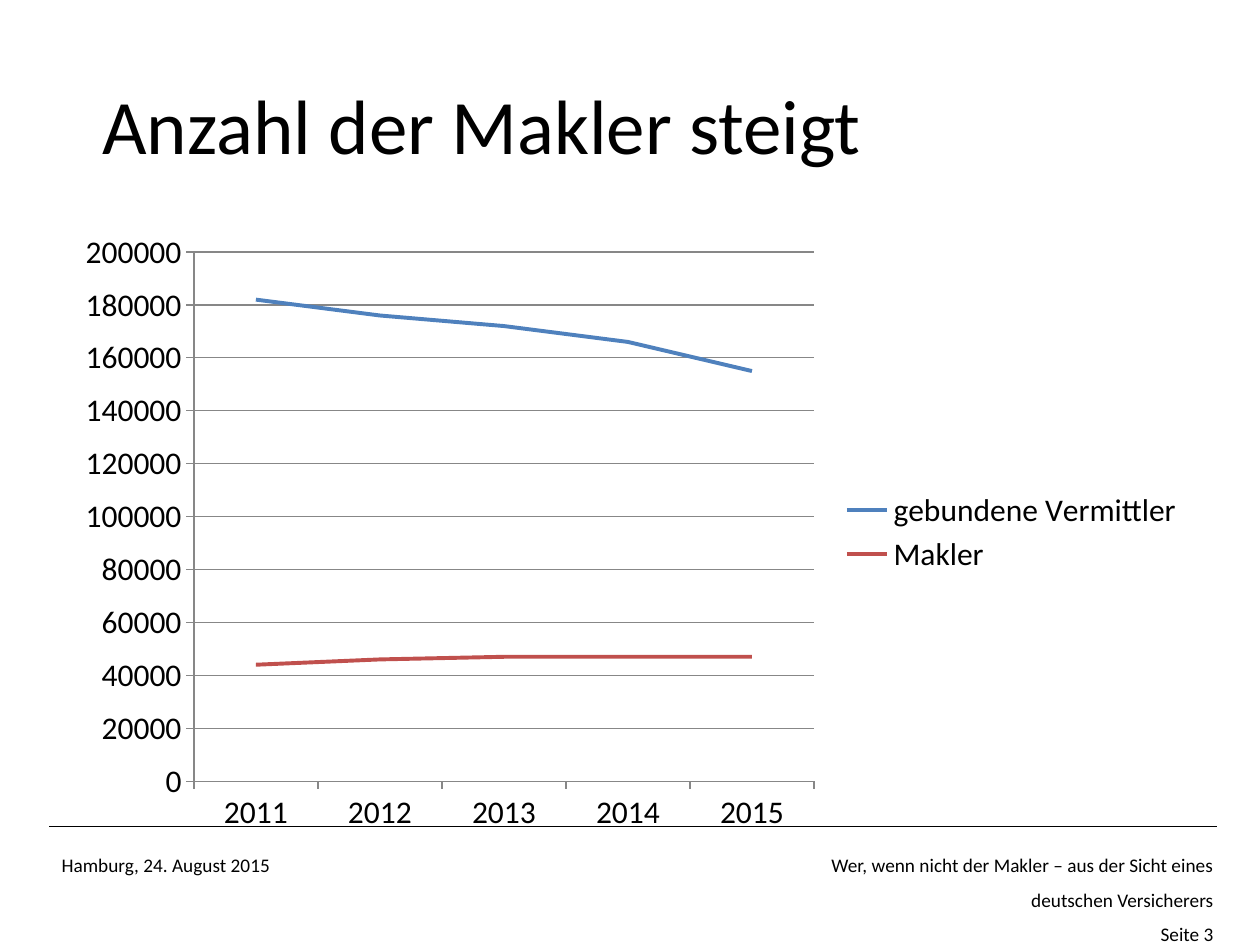
from pptx import Presentation
from pptx.chart.data import CategoryChartData
from pptx.dml.color import RGBColor
from pptx.enum.chart import XL_CHART_TYPE, XL_LEGEND_POSITION, XL_TICK_MARK
from pptx.enum.shapes import MSO_CONNECTOR
from pptx.enum.text import MSO_ANCHOR, PP_ALIGN
from pptx.oxml.ns import qn
from pptx.util import Inches, Pt
from lxml import etree

BLACK = RGBColor(0x00, 0x00, 0x00)
GRAY = RGBColor(0x87, 0x87, 0x87)
BLUE = RGBColor(0x4F, 0x81, 0xBD)
RED = RGBColor(0xC0, 0x50, 0x4D)
LINE = XL_CHART_TYPE.LINE
OUT = XL_TICK_MARK.OUTSIDE
SIDE = XL_LEGEND_POSITION.RIGHT
STRAIGHT = MSO_CONNECTOR.STRAIGHT
MIDDLE = MSO_ANCHOR.MIDDLE
LEFT, CENTER, RIGHT = PP_ALIGN.LEFT, PP_ALIGN.CENTER, PP_ALIGN.RIGHT
FONT = "Calibri"
COLS, ROWS = 100, 75


class Page:
    """Holds the style and the slide; lengths are cells of a 100 by 75 grid."""

    def __init__(self, deck):
        self.slide = deck.slides.add_slide(deck.slide_layouts[5])
        self.shapes = self.slide.shapes
        self.col = deck.slide_width / COLS
        self.row = deck.slide_height / ROWS

    def box(self, x, y, w, h):
        """Turn grid cells into slide lengths."""
        return (int(x * self.col), int(y * self.row),
                int(w * self.col), int(h * self.row))

    def style(self, font, size):
        font.name, font.size = FONT, Pt(size)
        font.color.rgb = BLACK

    def title(self, text, *cells):
        shape = self.shapes.title
        shape.left, shape.top, shape.width, shape.height = self.box(*cells)
        frame = shape.text_frame
        frame.text = text
        frame.vertical_anchor = MIDDLE
        para = frame.paragraphs[0]
        para.alignment = CENTER
        self.style(para.runs[0].font, 44)

    def text(self, lines, *cells, align=LEFT, wrap=True, hang=0):
        frame = self.shapes.add_textbox(*self.box(*cells)).text_frame
        frame.word_wrap = wrap
        frame.text = "\n".join(lines)
        for para in frame.paragraphs:
            para.alignment, para.line_spacing = align, 1.5
            if hang:
                props = para._p.get_or_add_pPr()
                props.set("marL", str(Inches(hang)))
                props.set("indent", str(-Inches(hang)))
            self.style(para.runs[0].font, 11)

    def rule(self, x, y, w):
        left, top, width, _ = self.box(x, y, w, 0)
        line = self.shapes.add_connector(STRAIGHT, left, top, left + width, top)
        line.line.color.rgb, line.line.width = BLACK, Pt(0.75)
        etree.SubElement(line._element.spPr, qn("a:effectLst"))

    def chart(self, years, rows, *cells):
        data = CategoryChartData()
        data.categories = years
        for name, _, values in rows:
            data.add_series(name, values)
        chart = self.shapes.add_chart(LINE, *self.box(*cells), data).chart
        self.style(chart.font, 18)
        chart.has_title = False
        chart.has_legend = True
        chart.legend.position = SIDE
        chart.legend.include_in_layout = False
        plot = chart.plots[0]
        plot.vary_by_categories = False
        for series, (_, color, _) in zip(plot.series, rows):
            series.smooth = False
            series.format.line.color.rgb = color
            series.format.line.width = Pt(2.25)
        value = chart.value_axis
        value.minimum_scale, value.maximum_scale = 0, 200000
        value.major_unit = 20000
        value.has_major_gridlines = True
        chart.category_axis.major_tick_mark = value.major_tick_mark = OUT
        for part in (value, chart.category_axis, value.major_gridlines):
            part.format.line.color.rgb = GRAY
            part.format.line.width = Pt(0.75)


def main():
    deck = Presentation()
    deck.slide_width, deck.slide_height = Inches(10), Inches(7.5)
    page = Page(deck)
    page.rule(3.9, 65.6, 92.7)
    page.text(["Hamburg, 24. August 2015"], 3.9, 66.3, 18.7, 3.8, wrap=False)
    page.text(["Wer, wenn nicht der Makler – aus der Sicht eines "
               "deutschen Versicherers", "Seite 3"],
              64.6, 66.3, 32.7, 9.3, align=RIGHT, hang=0.68)
    page.title("Anzahl der Makler steigt", 0, 4.5, 76.5, 10.7)
    page.chart(["2011", "2012", "2013", "2014", "2015"], [
        ("gebundene Vermittler", BLUE, [182000, 176000, 172000, 166000, 155000]),
        ("Makler", RED, [44000, 46000, 47000, 47000, 47000]),
    ], 5, 17.5, 90, 49.5)
    deck.save("out.pptx")


if __name__ == "__main__":
    main()
